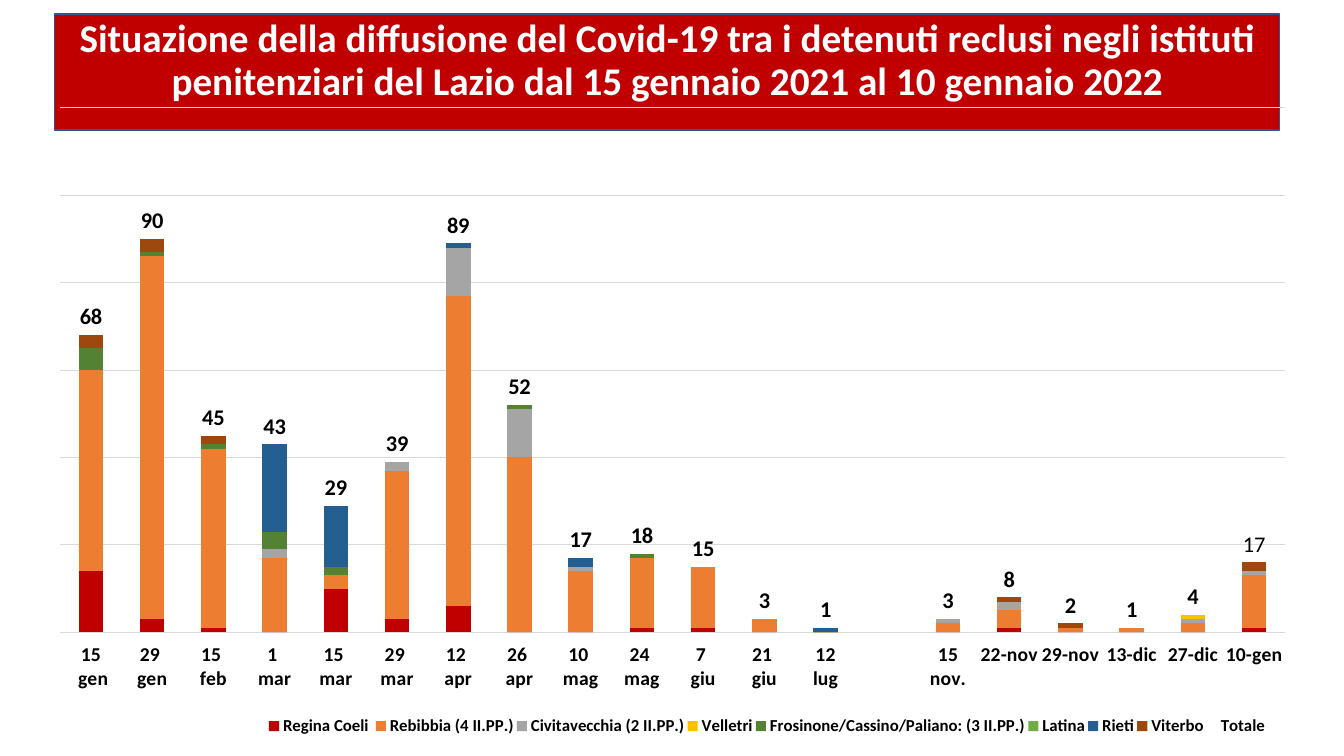
from lxml.etree import SubElement
from pptx import Presentation
from pptx.chart.data import CategoryChartData
from pptx.dml.color import RGBColor
from pptx.enum.chart import XL_CHART_TYPE as ChartType
from pptx.enum.chart import XL_LABEL_POSITION as LabelPosition
from pptx.enum.chart import XL_LEGEND_POSITION as LegendPosition
from pptx.enum.chart import XL_TICK_LABEL_POSITION as TickLabels
from pptx.enum.chart import XL_TICK_MARK as TickMark
from pptx.enum.shapes import MSO_SHAPE as Preset
from pptx.enum.text import MSO_ANCHOR as Anchor
from pptx.enum.text import PP_ALIGN as Align
from pptx.oxml.ns import qn
from pptx.util import Inches, Pt

RED = RGBColor(0xC0, 0x00, 0x00)
ORANGE = RGBColor(0xED, 0x7D, 0x31)
GRAY = RGBColor(0xA5, 0xA5, 0xA5)
YELLOW = RGBColor(0xFF, 0xC0, 0x00)
DARK_GREEN = RGBColor(0x54, 0x82, 0x35)
GREEN = RGBColor(0x70, 0xAD, 0x47)
BLUE = RGBColor(0x25, 0x5E, 0x91)
BROWN = RGBColor(0x9E, 0x48, 0x0E)
BANNER_EDGE = RGBColor(0x32, 0x54, 0x91)
GRID = RGBColor(0xD9, 0xD9, 0xD9)
BLACK = RGBColor(0, 0, 0)
WHITE = RGBColor(0xFF, 0xFF, 0xFF)

TITLE = (
    "Situazione della diffusione del Covid-19 tra i detenuti reclusi negli istituti "
    "penitenziari del Lazio dal 15 gennaio 2021 al 10 gennaio 2022"
)
DATES = [
    "15\n gen", "29 \ngen", "15 \nfeb", "1 \nmar", "15 \nmar", "29 \nmar", "12 \napr",
    "26 \napr", "10 \nmag", "24 \nmag", "7 \ngiu", "21 \ngiu", "12\nlug", "", "15 nov.",
    "22-nov", "29-nov", "13-dic", "27-dic", "10-gen",
]
PRISONS = [
    ("Regina Coeli ", RED,
     [14, 3, 1, 0, 10, 3, 6, 0, 0, 1, 1, 0, 0, None, 0, 1, 0, 0, 0, 1]),
    ("Rebibbia (4 II.PP.)", ORANGE,
     [46, 83, 41, 17, 3, 34, 71, 40, 14, 16, 14, 3, 0, None, 2, 4, 1, 1, 2, 12]),
    ("Civitavecchia (2 II.PP.)", GRAY,
     [0, 0, 0, 2, 0, 2, 11, 11, 1, 0, 0, 0, 0, None, 1, 2, 0, None, 1, 1]),
    ("Velletri", YELLOW, [0] * 13 + [None, 0, 0, 0, 0, 1, 0]),
    ("Frosinone/Cassino/Paliano: (3 II.PP.)", DARK_GREEN,
     [5, 1, 1, 4, 2, 0, 0, 1, 0, 1, 0, 0, 0, None, 0, 0, 0, 0, 0, 0]),
    ("Latina", GREEN, [0] * 13 + [None] + [0] * 6),
    ("Rieti", BLUE,
     [0, 0, 0, 20, 14, 0, 1, 0, 2, 0, 0, 0, 1, None, 0, 0, 0, 0, 0, 0]),
    ("Viterbo", BROWN,
     [3, 3, 2, 0, 0, 0, 0, 0, 0, 0, 0, 0, 0, None, 0, 1, 1, 0, 0, 2]),
    ("Totale", None,
     [68, 90, 45, 43, 29, 39, 89, 52, 17, 18, 15, 3, 1, None, 3, 8, 2, 1, 4, 16]),
]


def set_values(target, values):
    for name, value in values.items():
        setattr(target, name, value)


def style_font(font, size, color=BLACK, bold=True):
    set_values(font, {"name": "Calibri", "size": Pt(size), "bold": bold})
    font.color.rgb = color


def style_line(line, color, width):
    line.color.rgb = color
    line.width = Pt(width)


def place(part, x, y, w, h, inner=False):
    layout = part.find(qn("c:layout"))
    if layout is None:
        layout = part.makeelement(qn("c:layout"))
        anchor = part.find(qn("c:legendPos"))
        if anchor is None:
            part.insert(0, layout)
        else:
            anchor.addnext(layout)
    for child in list(layout):
        layout.remove(child)
    manual = SubElement(layout, qn("c:manualLayout"))
    settings = {"layoutTarget": "inner"} if inner else {}
    settings.update(xMode="edge", yMode="edge", x=x, y=y, w=w, h=h)
    for tag, value in settings.items():
        SubElement(manual, qn(f"c:{tag}")).set("val", str(value))


def add_banner(slide):
    banner = slide.shapes.add_shape(
        Preset.RECTANGLE, Inches(0.54), Inches(0.14), Inches(12.15), Inches(1.15))
    banner.shadow.inherit = False
    banner.fill.solid()
    banner.fill.fore_color.rgb = RED
    style_line(banner.line, BANNER_EDGE, 1)
    set_values(banner.text_frame, {"word_wrap": True, "vertical_anchor": Anchor.TOP})
    heading = banner.text_frame.paragraphs[0]
    set_values(heading, {
        "alignment": Align.CENTER, "line_spacing": 0.9, "space_before": Pt(10)})
    run = heading.add_run()
    run.text = TITLE
    style_font(run.font, 28, WHITE)


def style_axes(chart):
    dates = chart.category_axis
    set_values(dates, {
        "major_tick_mark": TickMark.NONE, "minor_tick_mark": TickMark.NONE,
        "tick_label_position": TickLabels.LOW})
    style_font(dates.tick_labels.font, 14)
    style_line(dates.format.line, GRID, 0.75)
    cases = chart.value_axis
    set_values(cases, {
        "minimum_scale": 0, "maximum_scale": 120, "major_unit": 20,
        "has_major_gridlines": True, "visible": False})
    style_line(cases.major_gridlines.format.line, GRID, 0.75)


def style_legend(chart):
    chart.has_legend = True
    legend = chart.legend
    set_values(legend, {"position": LegendPosition.BOTTOM, "include_in_layout": False})
    style_font(legend.font, 12)
    place(legend._element, 0.18, 0.93, 0.8, 0.05)


def label_totals(totals):
    labels = totals.data_labels
    set_values(labels, {"show_value": True, "position": LabelPosition.INSIDE_BASE})
    style_font(labels.font, 16)
    latest = totals.points[len(DATES) - 1].data_label
    run = latest.text_frame.paragraphs[0].add_run()
    run.text = "17"
    style_font(run.font, 16, bold=False)
    latest.position = LabelPosition.INSIDE_BASE


def add_cases_chart(slide):
    cases = CategoryChartData()
    cases.categories = DATES
    for name, _, values in PRISONS:
        cases.add_series(name, values)
    chart = slide.shapes.add_chart(
        ChartType.COLUMN_STACKED, Inches(0.4), Inches(0.94), Inches(12.43),
        Inches(6.56), cases).chart
    chart.has_title = False
    style_font(chart.font, 10, bold=False)
    plot = chart.plots[0]
    set_values(plot, {"gap_width": 150, "overlap": 100, "vary_by_categories": False})
    for series, (_, color, _) in zip(plot.series, PRISONS):
        series.format.line.fill.background()
        if color is None:
            series.format.fill.background()
            label_totals(series)
        else:
            series.format.fill.solid()
            series.format.fill.fore_color.rgb = color
    style_axes(chart)
    style_legend(chart)
    plot_area = chart._chartSpace.chart.plotArea
    place(plot_area, 0.016, 0.02, 0.977, 0.793, inner=True)


def main():
    deck = Presentation()
    set_values(deck, {"slide_width": Inches(13.33), "slide_height": Inches(7.5)})
    slide = deck.slides.add_slide(deck.slide_layouts[6])
    add_banner(slide)
    add_cases_chart(slide)
    deck.save("out.pptx")


if __name__ == "__main__":
    main()
